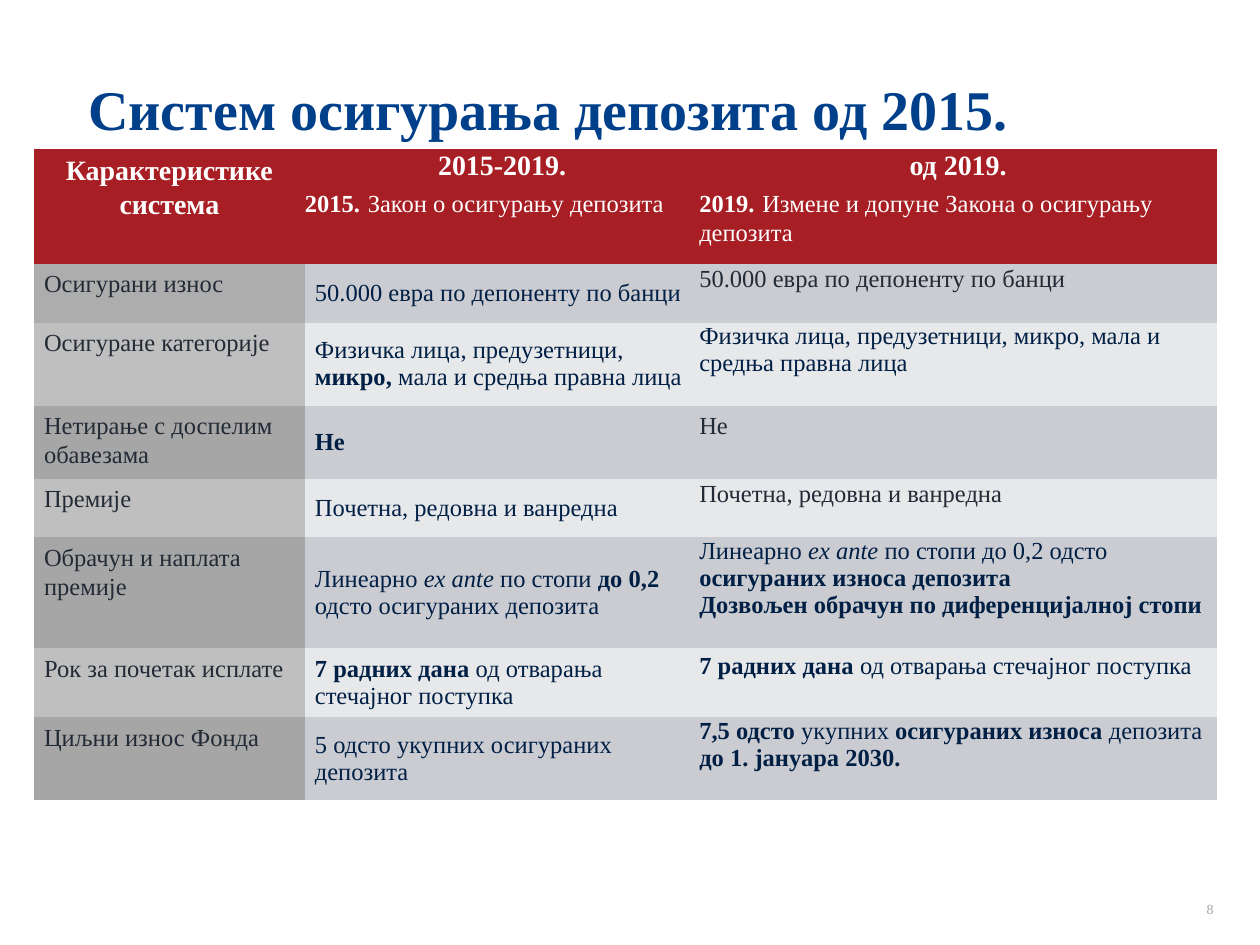
import pptx
import pptx.dml.color
import pptx.enum.text
import pptx.oxml.ns
import pptx.util
from lxml import etree

Pt = pptx.util.Pt
Align = pptx.enum.text.PP_ALIGN
Anchor = pptx.enum.text.MSO_ANCHOR

# Content: a paragraph is a list of (text, style) runs; b = bold, i = italic
TITLE = "Систем осигурања депозита од 2015."
PAGE_NUMBER = "8"
HEADERS = [
    ("Карактеристике система", None),
    ("2015-2019.", [("2015.", "b"), ("\tЗакон о осигурању депозита", "")]),
    ("од 2019.", [("2019.", "b"), ("\tИзмене и допуне Закона о осигурању депозита", "")]),
]
FEATURES = [
    ("Осигурани износ",
     [[("50.000 евра по депоненту по банци", "")]],
     [[("50.000 евра по депоненту по банци", "")]]),
    ("Осигуране категорије",
     [[("Физичка лица, предузетници, ", ""), ("микро,", "b"),
       (" мала и средња правна лица", "")]],
     [[("Физичка лица, предузетници, микро, мала и средња правна лица", "")]]),
    ("Нетирање с доспелим обавезама",
     [[("Не", "b")]],
     [[("Не", "")]]),
    ("Премије",
     [[("Почетна, редовна и ванредна", "")]],
     [[("Почетна, редовна и ванредна", "")]]),
    ("Обрачун и наплата премије",
     [[("Линеарно ", ""), ("еx ante ", "i"), ("по стопи ", ""), ("до 0,2 ", "b"),
       ("одсто осигураних депозита", "")]],
     [[("Линеарно ", ""), ("еx ante ", "i"), ("по стопи до 0,2 одсто ", ""),
       ("осигураних износа депозита", "b")],
      [("Дозвољен обрачун по диференцијалној стопи", "b")]]),
    ("Рок за почетак исплате",
     [[("7 радних дана ", "b"), ("од отварања стечајног поступка", "")]],
     [[("7 радних дана ", "b"), ("од отварања стечајног поступка", "")]]),
    ("Циљни износ Фонда",
     [[("5 одсто укупних осигураних депозита", "")]],
     [[("7,5 одсто ", "b"), ("укупних", ""), (" осигураних износа ", "b"),
       ("депозита ", ""), ("до 1. јануара 2030.", "b")]]),
]

# Look
FONT = "Times New Roman"
BLUE, NAVY, DARK, WHITE, RED = "003F8A", "001F45", "222A35", "FFFFFF", "A71F24"
BANDS = [("A6A6A6", "CBCCD2"), ("BFBFBF", "E7E8EA")]
FIRST_LABEL_FILL = "ADADAD"
LATEST_COLORS = [DARK, NAVY, DARK, DARK, NAVY, NAVY, NAVY]
LATEST_TOPS = [0, 0, 2.8, 0, 0, 2.6, 0]
COLUMN_WIDTHS = [154.8, 225.4, 295.9]
ROW_HEIGHTS = [65.7, 33.7, 47.4, 38.9, 33.7, 63.4, 37.1, 47.4]
PADDING = (5.76, 2.88, 5.76, 2.88)
NO_PADDING = (0, 0, 0, 0)
LOOSE = 1.07
TAB_STOP = 36
PLAIN_TABLE_STYLE = "{2D5ABB26-0587-4C30-8999-92F81FD0307C}"


def rgb(color):
    return pptx.dml.color.RGBColor.from_string(color)


def write(paragraph, runs, size, color, spacing=1.0, align=Align.LEFT):
    for text, style in runs:
        run = paragraph.add_run()
        run.text = text
        run.font.bold = style == "b"
        run.font.italic = style == "i"
    paragraph.alignment = align
    paragraph.line_spacing = spacing
    paragraph.font.name = FONT
    paragraph.font.size = Pt(size)
    paragraph.font.color.rgb = rgb(color)


def add_text(slide, box, runs, size, color, anchor, padding, align=Align.LEFT):
    shape = slide.shapes.add_textbox(*map(Pt, box))
    frame = shape.text_frame
    frame.word_wrap = True
    frame.vertical_anchor = anchor
    frame.margin_left = frame.margin_right = Pt(padding)
    write(frame.paragraphs[0], runs, size, color, align=align)


def format_cell(cell, fill, padding, anchor=Anchor.TOP):
    cell.fill.solid()
    cell.fill.fore_color.rgb = rgb(fill)
    cell.vertical_anchor = anchor
    (cell.margin_left, cell.margin_top,
     cell.margin_right, cell.margin_bottom) = map(Pt, padding)


def fill_cell(cell, paragraphs, color, spacing=1.0):
    frame = cell.text_frame
    for index, runs in enumerate(paragraphs):
        paragraph = frame.add_paragraph() if index else frame.paragraphs[0]
        write(paragraph, runs, 14, color, spacing)


def add_tab_stop(paragraph, position):
    properties = paragraph._p.get_or_add_pPr()
    tabs = etree.SubElement(properties, pptx.oxml.ns.qn("a:tabLst"))
    etree.SubElement(tabs, pptx.oxml.ns.qn("a:tab"), pos=str(Pt(position)), algn="l")


presentation = pptx.Presentation()
presentation.slide_width, presentation.slide_height = Pt(720), Pt(540)
slide = presentation.slides.add_slide(presentation.slide_layouts[6])

# Title and page number
add_text(slide, (36, 36, 633.6, 51.1), [(TITLE, "b")], 32, BLUE, Anchor.MIDDLE, 14.4)
add_text(slide, (532.8, 499, 167.8, 28.8), [(PAGE_NUMBER, "")], 8, "A6A6A6",
         Anchor.BOTTOM, 7.2, Align.RIGHT)

# Table grid
table = slide.shapes.add_table(
    len(ROW_HEIGHTS), len(COLUMN_WIDTHS), Pt(19.4), Pt(85),
    Pt(sum(COLUMN_WIDTHS)), Pt(sum(ROW_HEIGHTS))).table
table.first_row = table.horz_banding = False
table._tbl.tblPr.find(pptx.oxml.ns.qn("a:tableStyleId")).text = PLAIN_TABLE_STYLE
for column, width in zip(table.columns, COLUMN_WIDTHS):
    column.width = Pt(width)
for row, height in zip(table.rows, ROW_HEIGHTS):
    row.height = Pt(height)

# Header row
for column, (heading, law) in enumerate(HEADERS):
    cell = table.cell(0, column)
    format_cell(cell, RED, NO_PADDING if law else PADDING)
    write(cell.text_frame.paragraphs[0], [(heading, "b")], 16, WHITE, LOOSE, Align.CENTER)
    if law:
        paragraph = cell.text_frame.add_paragraph()
        paragraph.space_before = Pt(3.9)
        add_tab_stop(paragraph, TAB_STOP)
        write(paragraph, law, 14, WHITE, LOOSE)

# Feature rows
for index, (label, earlier, latest) in enumerate(FEATURES):
    label_fill, value_fill = BANDS[index % 2]
    label_cell, earlier_cell, latest_cell = table.rows[index + 1].cells
    format_cell(label_cell, label_fill if index else FIRST_LABEL_FILL, PADDING)
    fill_cell(label_cell, [[(label, "")]], DARK, LOOSE)
    format_cell(earlier_cell, value_fill, PADDING, Anchor.MIDDLE)
    fill_cell(earlier_cell, earlier, NAVY)
    format_cell(latest_cell, value_fill, (0, LATEST_TOPS[index], 0, 0))
    latest_color = LATEST_COLORS[index]
    fill_cell(latest_cell, latest, latest_color, LOOSE if latest_color == DARK else 1.0)

presentation.save("out.pptx")
